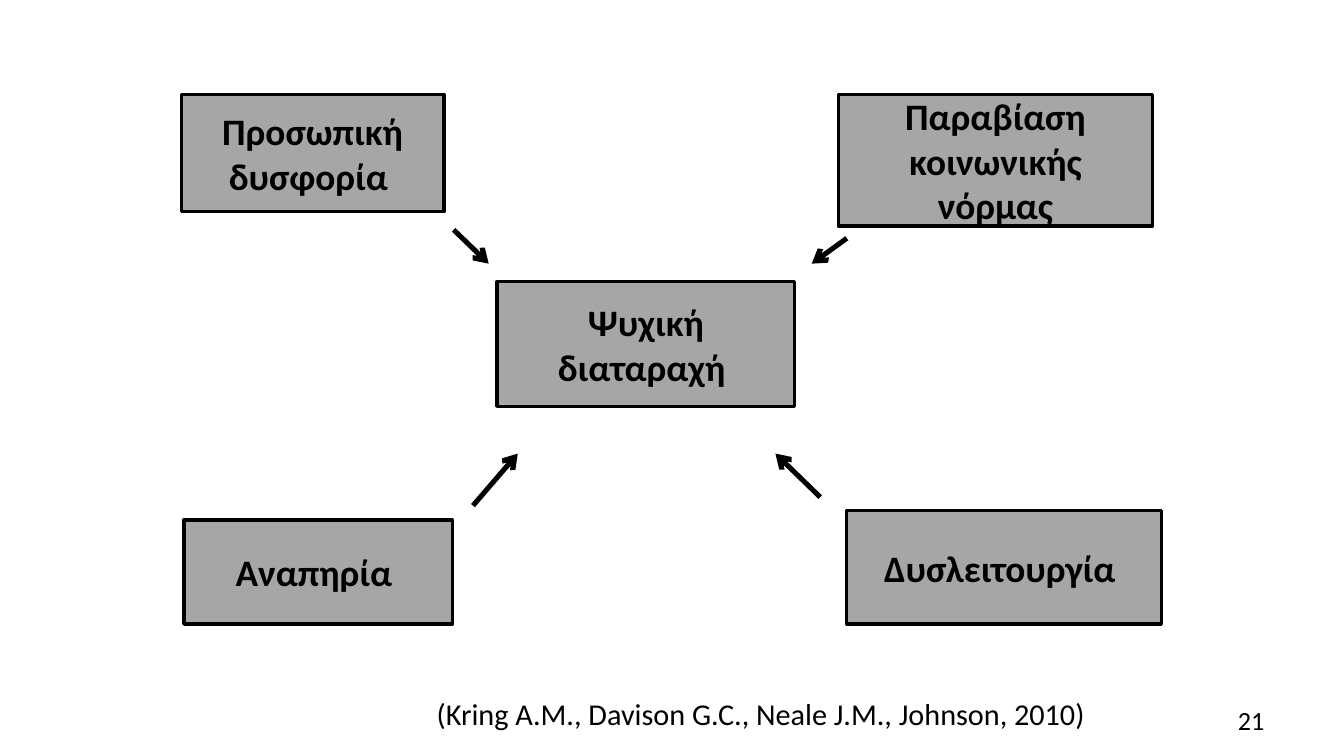
"""Build a diagram slide of four criteria that point to mental disorder."""
from dataclasses import dataclass

from lxml import etree
from pptx import Presentation
from pptx.dml.color import RGBColor
from pptx.enum.shapes import MSO_CONNECTOR, MSO_SHAPE
from pptx.enum.text import MSO_ANCHOR, PP_ALIGN
from pptx.oxml.ns import qn
from pptx.util import Inches, Pt

RECT = MSO_SHAPE.RECTANGLE
STRAIGHT = MSO_CONNECTOR.STRAIGHT
MIDDLE, TOP = MSO_ANCHOR.MIDDLE, MSO_ANCHOR.TOP
CENTER, RIGHT = PP_ALIGN.CENTER, PP_ALIGN.RIGHT
BLANK_LAYOUT = 6


@dataclass(frozen=True)
class Theme:
    """Colours, font, type sizes and line widths."""
    ink: RGBColor = RGBColor(0x00, 0x00, 0x00)
    box: RGBColor = RGBColor(0xA6, 0xA6, 0xA6)
    font: str = "Calibri"
    box_size: float = 22.2
    citation_size: float = 18
    number_size: float = 15.6
    border: float = 2
    arrow: float = 3


class Deck:
    """Hold the theme and current slide and draw each kind of element."""

    def __init__(self, s, theme):
        """Keep the slide and its theme."""
        self.s, self.theme = s, theme

    def add_text(self, sp, text, size, align, anchor, bold=False):
        """Put one formatted run into a shape."""
        tf = sp.text_frame
        tf.word_wrap = True
        tf.vertical_anchor = anchor
        p = tf.paragraphs[0]
        p.alignment = align
        r = p.add_run()
        r.text = text
        r.font.name = self.theme.font
        r.font.size = Pt(size)
        r.font.bold = bold
        r.font.color.rgb = self.theme.ink

    def box(self, text, *at):
        """Draw a bordered grey box with a bold centred label."""
        sp = self.s.shapes.add_shape(RECT, *map(Inches, at))
        sp.shadow.inherit = False
        sp.fill.solid()
        sp.fill.fore_color.rgb = self.theme.box
        sp.line.color.rgb = self.theme.ink
        sp.line.width = Pt(self.theme.border)
        self.add_text(sp, text, self.theme.box_size, CENTER, MIDDLE, bold=True)

    def arrow(self, *ends):
        """Draw an arrow from one point to another."""
        sp = self.s.shapes.add_connector(STRAIGHT, *map(Inches, ends))
        sp.line.color.rgb = self.theme.ink
        sp.line.width = Pt(self.theme.arrow)
        ln = sp._element.spPr.find(qn("a:ln"))
        etree.SubElement(ln, qn("a:tailEnd"), type="arrow")
        etree.SubElement(sp._element.spPr, qn("a:effectLst"))

    def label(self, text, size, anchor, *at):
        """Add right-aligned plain text."""
        sp = self.s.shapes.add_textbox(*map(Inches, at))
        self.add_text(sp, text, size, RIGHT, anchor)


BOXES = [
    ("Ψυχική διαταραχή ", 4.11, 2.33, 2.46, 1.03),
    ("Προσωπική δυσφορία ", 1.5, 0.78, 2.17, 0.97),
    ("Αναπηρία ", 1.52, 4.3, 2.22, 0.86),
    ("Παραβίαση κοινωνικής νόρμας", 6.93, 0.78, 2.6, 1.09),
    ("Δυσλειτουργία ", 7, 4.22, 2.6, 0.94),
]
ARROWS = [
    (3.91, 4.18, 4.28, 3.75),
    (3.75, 1.9, 4.04, 2.18),
    (7, 1.97, 6.71, 2.18),
    (6.78, 4.11, 6.41, 3.75),
]


def main():
    """Build and save the slide."""
    prs = Presentation()
    prs.slide_width, prs.slide_height = Inches(11.11), Inches(6.25)
    theme = Theme()
    deck = Deck(prs.slides.add_slide(prs.slide_layouts[BLANK_LAYOUT]), theme)
    for box in BOXES:
        deck.box(*box)
    for ends in ARROWS:
        deck.arrow(*ends)
    deck.label("21", theme.number_size, MIDDLE, 7.96, 5.79, 2.59, 0.33)
    deck.label("(Kring A.M., Davison G.C., Neale J.M., Johnson, 2010)",
               theme.citation_size, TOP, 1.18, 5.7, 7.89, 0.4)
    prs.save("out.pptx")


if __name__ == "__main__":
    main()
